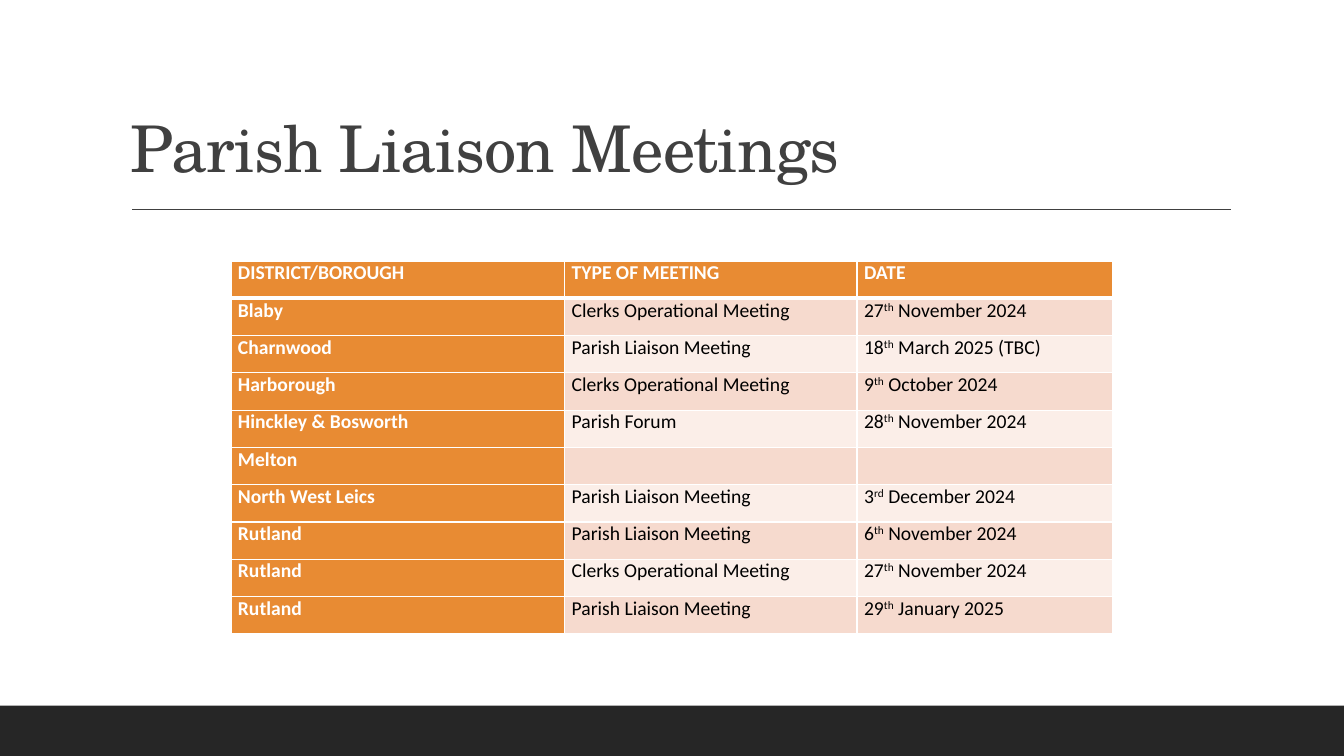
from dataclasses import dataclass
from typing import NamedTuple

import lxml.etree
import pptx
import pptx.dml.color
import pptx.enum.shapes
import pptx.enum.text
import pptx.oxml.ns
import pptx.util

Inches = pptx.util.Inches
Pt = pptx.util.Pt
qn = pptx.oxml.ns.qn


@dataclass(frozen=True)
class Theme:
    title_font: str = "TeX Gyre Schola"
    body_font: str = "Calibri"
    title_size: float = 46
    body_size: float = 14
    title: str = "404040"
    footer: str = "262626"
    accent: str = "E88B33"
    bands: tuple[str, str] = ("F6DACE", "FBEEE8")
    white: str = "FFFFFF"
    black: str = "000000"


class Meeting(NamedTuple):
    district: str
    kind: str = ""
    day: str = ""
    suffix: str = ""
    month: str = ""


THEME = Theme()
HEADERS = ("DISTRICT/BOROUGH", "TYPE OF MEETING", "DATE")
COL_WIDTHS = (3.31, 2.9, 2.54)
ROW_HEIGHT = 0.37
CLERKS = "Clerks Operational Meeting"
LIAISON = "Parish Liaison Meeting"
MEETINGS = (
    Meeting("Blaby", CLERKS, "27", "th", " November 2024"),
    Meeting("Charnwood", LIAISON, "18", "th", " March 2025 (TBC)"),
    Meeting("Harborough", CLERKS, "9", "th", " October 2024"),
    Meeting("Hinckley & Bosworth", "Parish Forum", "28", "th", " November 2024"),
    Meeting("Melton"),
    Meeting("North West Leics", LIAISON, "3", "rd", " December 2024"),
    Meeting("Rutland", LIAISON, "6", "th", " November 2024"),
    Meeting("Rutland", CLERKS, "27", "th", " November 2024"),
    Meeting("Rutland", LIAISON, "29", "th", " January 2025"),
)


def rgb(color: str) -> pptx.dml.color.RGBColor:
    return pptx.dml.color.RGBColor.from_string(color)


def add_run(p, text: str, font: str, size: float, color: str, bold: bool = False):
    r = p.add_run()
    r.text = text
    r.font.name = font
    r.font.size = Pt(size)
    r.font.bold = bold
    r.font.color.rgb = rgb(color)
    return r


def add_border(cell, side: str, color: str, width: float) -> None:
    tc_pr = cell._tc.get_or_add_tcPr()
    ln = lxml.etree.SubElement(tc_pr, qn(f"a:ln{side}"), w=str(Pt(width)))
    fill = lxml.etree.SubElement(ln, qn("a:solidFill"))
    lxml.etree.SubElement(fill, qn("a:srgbClr"), val=color)


def style_cell(cell, fill: str, top: float, bottom: float) -> None:
    cell.margin_left = cell.margin_right = Inches(0.07)
    cell.margin_top = cell.margin_bottom = 0
    for side, width in (("L", 1), ("R", 1), ("T", top), ("B", bottom)):
        add_border(cell, side, THEME.white, width)
    cell.fill.solid()
    cell.fill.fore_color.rgb = rgb(fill)


def add_frame(slide) -> None:
    # Footer band
    sp = slide.shapes.add_shape(pptx.enum.shapes.MSO_SHAPE.RECTANGLE,
                                0, Inches(7), Inches(13.33), Inches(0.5))
    sp.shadow.inherit = False
    sp.fill.solid()
    sp.fill.fore_color.rgb = rgb(THEME.footer)
    sp.line.fill.background()

    # Rule under the title
    rule = slide.shapes.add_connector(pptx.enum.shapes.MSO_CONNECTOR.STRAIGHT,
                                      Inches(1.31), Inches(2.08), Inches(12.21), Inches(2.08))
    rule.line.color.rgb = rgb(THEME.title)
    rule.line.width = Pt(1)
    lxml.etree.SubElement(rule._element.spPr, qn("a:effectLst"))


def add_title(slide, text: str) -> None:
    sp = slide.shapes.add_textbox(Inches(1.2), Inches(0.31), Inches(11), Inches(1.59))
    tf = sp.text_frame
    tf.word_wrap = True
    tf.vertical_anchor = pptx.enum.text.MSO_ANCHOR.BOTTOM
    p = tf.paragraphs[0]
    p.line_spacing = 0.9
    r = add_run(p, text, THEME.title_font, THEME.title_size, THEME.title)
    r.font._element.set("spc", "-50")


def add_meeting_table(slide) -> None:
    rows = len(MEETINGS) + 1
    frame = slide.shapes.add_table(rows, len(HEADERS), Inches(2.29), Inches(2.59),
                                   Inches(sum(COL_WIDTHS)), Inches(ROW_HEIGHT * rows))
    table = frame.table
    for column, width in zip(table.columns, COL_WIDTHS):
        column.width = Inches(width)
    for row in table.rows:
        row.height = Inches(ROW_HEIGHT)

    # Header row, with a heavier line below it
    for col, text in enumerate(HEADERS):
        cell = table.cell(0, col)
        style_cell(cell, THEME.accent, 1, 3)
        add_run(cell.text_frame.paragraphs[0], text, THEME.body_font,
                THEME.body_size, THEME.white, True)

    # Meeting rows: accent first column, alternating bands beside it
    for row, meeting in enumerate(MEETINGS, start=1):
        band = THEME.bands[(row - 1) % 2]
        columns = ((meeting.district,), (meeting.kind,), meeting[2:])
        for col, parts in enumerate(columns):
            first = col == 0
            cell = table.cell(row, col)
            style_cell(cell, THEME.accent if first else band, 3 if row == 1 else 1, 1)
            p = cell.text_frame.paragraphs[0]
            for index, text in enumerate(parts):
                if not text:
                    continue
                r = add_run(p, text, THEME.body_font, THEME.body_size,
                            THEME.white if first else THEME.black, first)
                if index == 1:  # ordinal suffix
                    r.font._element.set("baseline", "30000")


def main() -> None:
    prs = pptx.Presentation()
    prs.slide_width, prs.slide_height = Inches(13.33), Inches(7.5)
    slide = prs.slides.add_slide(prs.slide_layouts[6])
    add_frame(slide)
    add_title(slide, "Parish Liaison Meetings")
    add_meeting_table(slide)
    prs.save("out.pptx")


if __name__ == "__main__":
    main()
